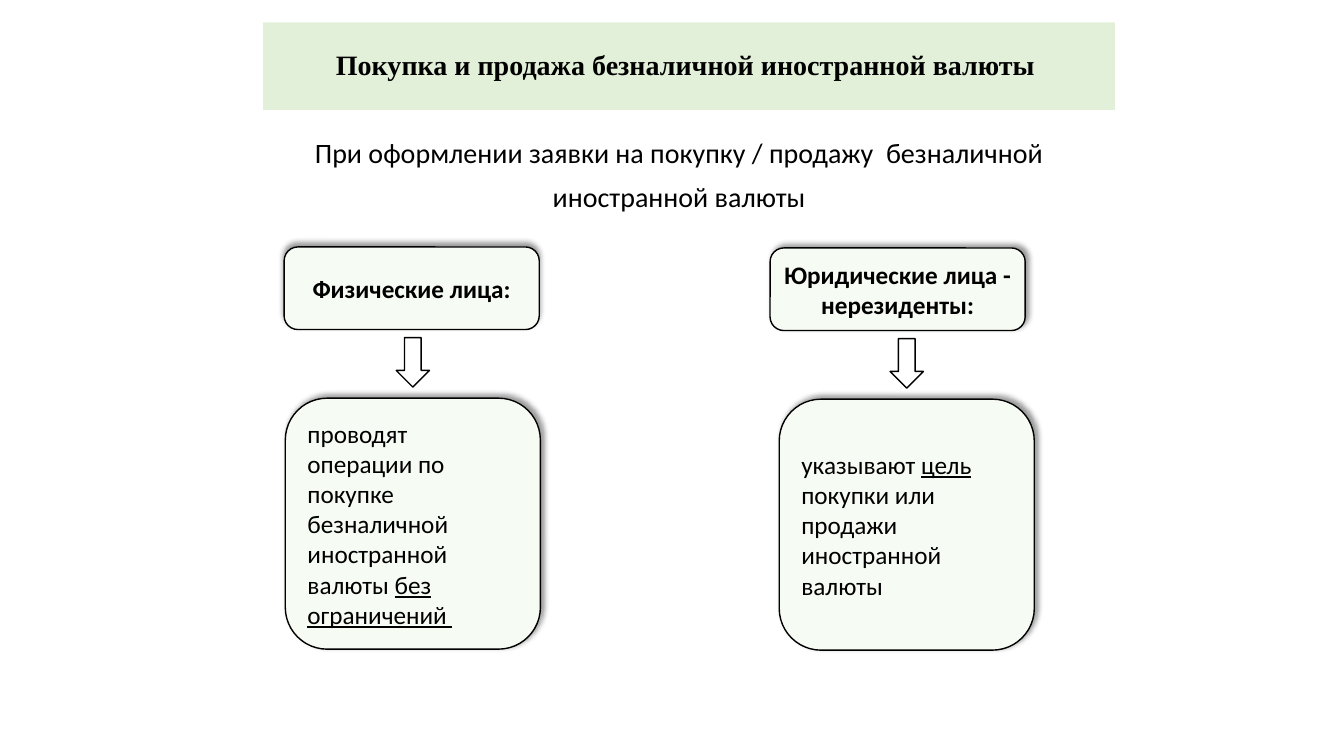
from dataclasses import dataclass

from lxml.etree import SubElement
from pptx import Presentation
from pptx.dml.color import RGBColor
from pptx.enum.shapes import MSO_SHAPE as Shape
from pptx.enum.text import MSO_ANCHOR as Anchor, MSO_AUTO_SIZE as AutoSize, PP_ALIGN as Align
from pptx.oxml.ns import qn
from pptx.util import Pt


@dataclass(frozen=True)
class Theme:
    black = RGBColor.from_string("000000")
    white = RGBColor.from_string("FFFFFF")
    banner = RGBColor.from_string("E2F0D9")
    card = RGBColor.from_string("F6FBF3")
    heading_font = "Times New Roman"
    text_font = "Calibri"
    large = Pt(20)
    medium = Pt(18)
    outline = Pt(1)


theme = Theme()


def add_span(para, text, size, font=theme.text_font, bold=False, underline=False):
    span = para.add_run()
    span.text = text
    span.font.name = font
    span.font.size = size
    span.font.bold = bold
    span.font.underline = underline
    span.font.color.rgb = theme.black


def add_outlined(page, kind, left, top, width, height, fill, shadow_angle=None):
    box = page.shapes.add_shape(kind, Pt(left), Pt(top), Pt(width), Pt(height))
    box.fill.solid()
    box.fill.fore_color.rgb = fill
    box.line.color.rgb = theme.black
    box.line.width = theme.outline
    box.shadow.inherit = False
    if shadow_angle is not None:
        effects = box._element.spPr.find(qn("a:effectLst"))
        shadow = SubElement(effects, qn("a:outerShdw"), blurRad=str(Pt(4)), dist=str(Pt(3)),
                            dir=str(shadow_angle * 60000), algn="bl", rotWithShape="0")
        color = SubElement(shadow, qn("a:srgbClr"), val=str(theme.black))
        SubElement(color, qn("a:alpha"), val="40000")
    box.text_frame.word_wrap = True
    box.text_frame.vertical_anchor = Anchor.MIDDLE
    return box


deck = Presentation()
deck.slide_width, deck.slide_height = Pt(960), Pt(540)
page = deck.slides.add_slide(deck.slide_layouts[1])

title = page.shapes.title
title.left, title.top, title.width, title.height = Pt(188), Pt(16), Pt(608.4), Pt(62.6)
title.fill.solid()
title.fill.fore_color.rgb = theme.banner
frame = title.text_frame
frame.auto_size = AutoSize.NONE
frame.word_wrap = False
frame.vertical_anchor = Anchor.MIDDLE
frame.margin_left = frame.margin_top = frame.margin_right = frame.margin_bottom = 0
para = frame.paragraphs[0]
para.alignment = Align.CENTER
para.line_spacing = 0.9
add_span(para, "Покупка и продажа безналичной иностранной валюты ", theme.large,
         theme.heading_font, bold=True)

intro = page.placeholders[1]
intro.left, intro.top, intro.width, intro.height = Pt(170.6), Pt(95.8), Pt(633.6), Pt(61.2)
frame = intro.text_frame
frame.auto_size = AutoSize.NONE
frame.word_wrap = True
frame.vertical_anchor = Anchor.TOP
intro_lines = ["При оформлении заявки на покупку / продажу  безналичной ", "иностранной валюты "]
for index, line in enumerate(intro_lines):
    para = frame.add_paragraph() if index else frame.paragraphs[0]
    properties = para._p.get_or_add_pPr()
    properties.set("marL", "0")
    properties.set("indent", "0")
    SubElement(properties, qn("a:buNone"))
    para.alignment = Align.CENTER
    para.line_spacing = 0.9
    para.space_before = Pt(10 if index else 0)
    add_span(para, line, theme.large)

columns = [
    (203, 203.8, 176.4, 270, "Физические лица:",
     [("проводят операции по покупке безналичной иностранной валюты ", False),
      ("без ограничений ", True)]),
    (550.1, 556.6, 177.1, 315, "Юридические лица - нерезиденты:",
     [("указывают ", False), ("цель", True),
      (" покупки или продажи иностранной валюты", False)]),
]
for header_left, card_left, top, header_shadow, heading, spans in columns:
    header = add_outlined(page, Shape.ROUNDED_RECTANGLE, header_left, top, 182.2, 59,
                          theme.card, header_shadow)
    para = header.text_frame.paragraphs[0]
    para.alignment = Align.CENTER
    add_span(para, heading, theme.medium, bold=True)

    card = add_outlined(page, Shape.ROUNDED_RECTANGLE, card_left, top + 108, 182.2, 179.3,
                        theme.card, 315)
    para = card.text_frame.paragraphs[0]
    para.alignment = Align.LEFT
    for text, underline in spans:
        add_span(para, text, theme.medium, underline=underline)

    add_outlined(page, Shape.DOWN_ARROW, card_left + 79.2, top + 64.8, 23.8, 35.3, theme.white)

deck.save("out.pptx")
